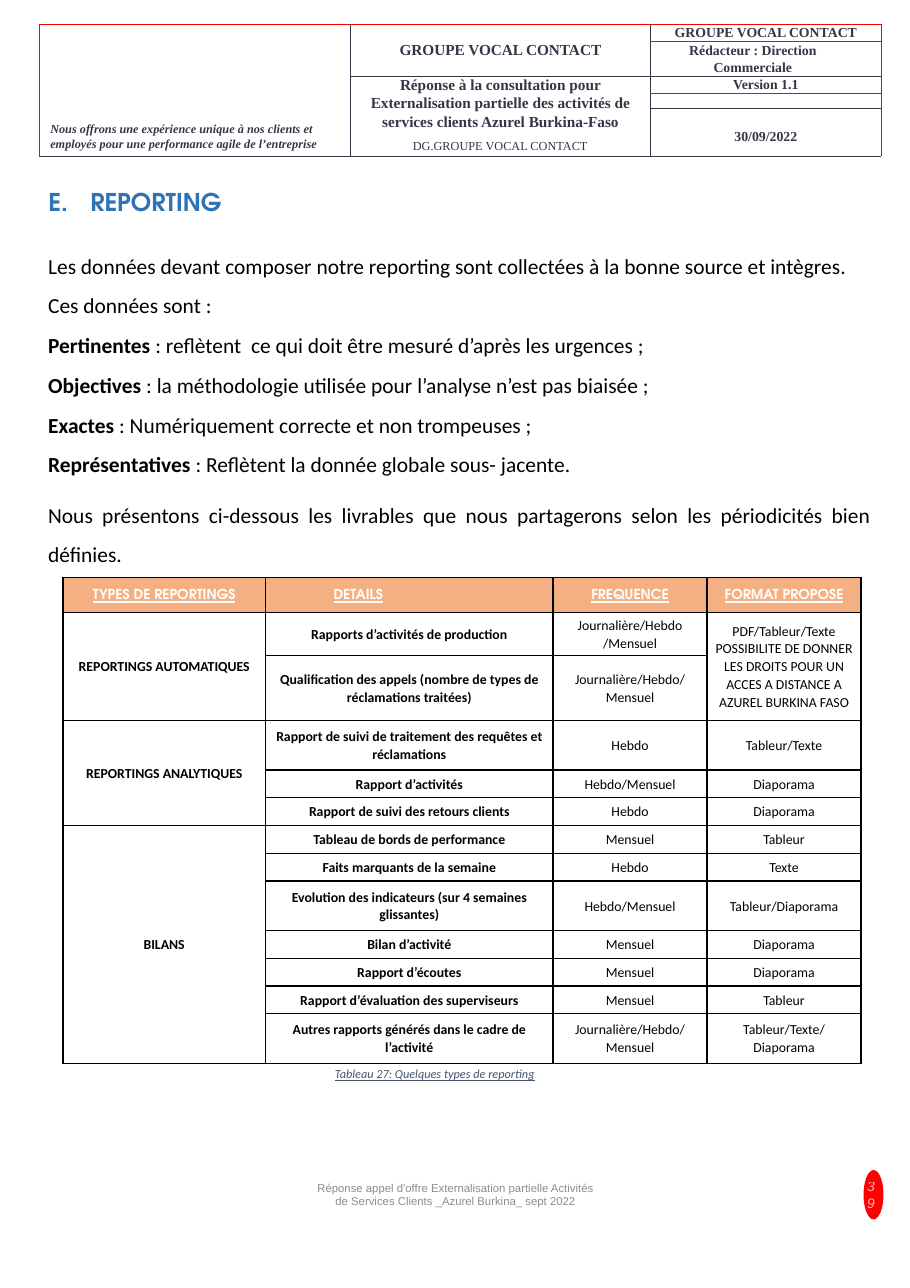
from lxml import etree
from pptx import Presentation
from pptx.dml.color import RGBColor
from pptx.enum.shapes import MSO_SHAPE
from pptx.enum.text import MSO_ANCHOR, PP_ALIGN
from pptx.oxml.ns import qn
from pptx.util import Cm, Pt

LEFT, CENTER, RIGHT, JUSTIFY = PP_ALIGN.LEFT, PP_ALIGN.CENTER, PP_ALIGN.RIGHT, PP_ALIGN.JUSTIFY
TOP, MIDDLE = MSO_ANCHOR.TOP, MSO_ANCHOR.MIDDLE
ELLIPSE = MSO_SHAPE.OVAL
RED, BLACK, WHITE, INK = "FF0000", "000000", "FFFFFF", "373545"

# Text styles
HEADER = dict(name="Times New Roman", size=Pt(9), bold=True, color=INK)
TITLE = dict(name="TeX Gyre Adventor", size=Pt(16), bold=True, color="2E74B5")
BODY = dict(name="Calibri", size=Pt(14), color=BLACK)
HEAD_ROW = dict(name="TeX Gyre Adventor", size=Pt(9), bold=True, underline=True, color=WHITE)
CELL = dict(name="Calibri", size=Pt(9), color=BLACK)
CELL_BOLD = {**CELL, "bold": True}
CAPTION = dict(name="Calibri", size=Pt(8), italic=True, underline=True, color="44546A")
FOOTER = dict(name="Arial", size=Pt(7.4), color="8C8C8C")
PAGE = dict(name="Arial", size=Pt(9), italic=True, color=WHITE)


def rgb(value):
    return RGBColor.from_string(value)


class Page:
    def __init__(self, prs):
        self.s = prs.slides.add_slide(prs.slide_layouts[5])

    def fill_text(self, tf, paras, fmt, **para_fmt):
        """Each paragraph is a string or a list of (text, format changes)."""
        for i, para in enumerate(paras):
            p = tf.paragraphs[0] if i == 0 else tf.add_paragraph()
            for key, value in para_fmt.items():
                setattr(p, key, value)
            for text, change in [(para, {})] if isinstance(para, str) else para:
                r = p.add_run()
                r.text = text
                for key, value in {**fmt, **change}.items():
                    if key == "color":
                        r.font.color.rgb = rgb(value)
                    else:
                        setattr(r.font, key, value)

    def indent(self, p, left, first):
        pPr = p._p.get_or_add_pPr()
        pPr.set("marL", str(Cm(left)))
        pPr.set("indent", str(Cm(first)))
        return pPr

    def title(self, box, text):
        sp = self.s.shapes.title
        sp.left, sp.top, sp.width, sp.height = map(Cm, box)
        tf = sp.text_frame
        tf.vertical_anchor = TOP
        self.fill_text(tf, [text], TITLE, alignment=LEFT, line_spacing=1.07)
        pPr = self.indent(tf.paragraphs[0], 0.97, -0.97)
        etree.SubElement(pPr, qn("a:buFont"), typeface="+mj-lt")
        etree.SubElement(pPr, qn("a:buAutoNum"), type="alphaUcPeriod", startAt="5")

    def text(self, box, paras, fmt, anchor=TOP, wrap=True, **para_fmt):
        tf = self.s.shapes.add_textbox(*map(Cm, box)).text_frame
        tf.word_wrap, tf.vertical_anchor = wrap, anchor
        self.fill_text(tf, paras, fmt, **para_fmt)
        return tf

    def ellipse(self, box, color):
        sp = self.s.shapes.add_shape(ELLIPSE, *map(Cm, box))
        sp.shadow.inherit = False
        sp.fill.solid()
        sp.fill.fore_color.rgb = rgb(color)
        sp.line.fill.background()

    def table(self, x, y, cols, rows, merges, side):
        frame = self.s.shapes.add_table(len(rows), len(cols), Cm(x), Cm(y),
                                        Cm(sum(cols)), Cm(sum(rows)))
        tbl = frame.table
        tbl.first_row = tbl.horz_banding = False
        for col, width in zip(tbl.columns, cols):
            col.width = Cm(width)
        for row, height in zip(tbl.rows, rows):
            row.height = Cm(height)
        for r, c, last in merges:
            tbl.cell(r, c).merge(tbl.cell(last, c))
        for cell in tbl.iter_cells():
            cell.margin_left = cell.margin_right = Cm(side)
            cell.margin_top = cell.margin_bottom = 0
            cell.fill.background()
            end = etree.SubElement(cell.text_frame.paragraphs[0]._p, qn("a:endParaRPr"))
            end.set("sz", "700")
        return tbl

    def border(self, cell, colors, width):
        tcPr = cell._tc.get_or_add_tcPr()
        for i, edge in enumerate("LRTB"):
            ln = etree.Element(qn("a:ln" + edge), w=str(Pt(width)))
            fill = etree.SubElement(ln, qn("a:solidFill"))
            etree.SubElement(fill, qn("a:srgbClr"), val=colors[edge])
            tcPr.insert(i, ln)


def header(page):
    tbl = page.table(0.91, 0.56, [7.16, 6.93, 5.31], [0.37, 0.81, 0.39, 0.35, 1.11],
                     [(0, 0, 4), (0, 1, 1), (2, 1, 4)], 0)
    # Red edges of each cell; the others are dark
    red_edges = [["LT", "T", "RTB"], ["L", "", "RT"], ["L", "", "RB"], ["L", "", "RT"],
                 ["L", "", "R"]]
    for r, row in enumerate(red_edges):
        for c, red in enumerate(row):
            page.border(tbl.cell(r, c), {e: RED if e in red else INK for e in "LRTB"}, 0.25)
    big = {"size": Pt(10)}
    texts = [
        (0, 1, [[("GROUPE VOCAL CONTACT", big)]], None),
        (0, 2, ["GROUPE VOCAL CONTACT"], 10.7),
        (1, 2, ["Rédacteur : Direction Commerciale"], 11.3),
        (2, 1, [[("Réponse à la consultation pour", big)],
                [("Externalisation partielle des activités de services clients "
                  "Azurel Burkina-Faso", big)],
                [("DG.GROUPE VOCAL CONTACT", {"size": Pt(8), "bold": False})]], 11.9),
        (2, 2, ["Version 1.1"], 10.8),
        (4, 2, ["30/09/2022"], None),
    ]
    for r, c, paras, spacing in texts:
        page.fill_text(tbl.cell(r, c).text_frame, paras, HEADER, alignment=CENTER,
                       line_spacing=Pt(spacing) if spacing else None)
    tbl.cell(0, 1).vertical_anchor = tbl.cell(4, 2).vertical_anchor = MIDDLE
    tbl.cell(4, 2).margin_top = Cm(0.22)
    tbl.cell(2, 1).text_frame.paragraphs[2].space_before = Pt(2.6)
    editor = tbl.cell(1, 2).text_frame.paragraphs[0]
    editor.alignment = LEFT
    page.indent(editor, 1.45, -0.56)
    page.text((0.91, 2.67, 7.24, 0.94),
              ["Nous offrons une expérience unique à nos clients et employés pour une "
               "performance agile de l’entreprise"], {**HEADER, "size": Pt(8), "italic": True})


def body(page):
    page.title((0.86, 4.14, 19.48, 1), "REPORTING")
    qualities = [("Pertinentes", " : reflètent  ce qui doit être mesuré d’après les urgences ;"),
                 ("Objectives", " : la méthodologie utilisée pour l’analyse n’est pas biaisée ;"),
                 ("Exactes", " : Numériquement correcte et non trompeuses ;"),
                 ("Représentatives", " : Reflètent la donnée globale sous- jacente.")]
    paras = ["Les données devant composer notre reporting sont collectées à la bonne source "
             "et intègres.", "Ces données sont :"]
    paras += [[(name, {"bold": True}), (rest, {})] for name, rest in qualities]
    paras.append("Nous présentons ci-dessous les livrables que nous partagerons selon les "
                 "périodicités bien définies.")
    tf = page.text((0.86, 5.66, 19.48, 7.6), paras, BODY, alignment=JUSTIFY,
                   line_spacing=1.07, space_after=Pt(8))
    tf.paragraphs[-1].line_spacing = 1.5


def reports(page):
    often = ["Journalière/Hebdo/", "Mensuel"]
    access = ("PDF/Tableur/Texte POSSIBILITE DE DONNER LES DROITS POUR UN ACCES A DISTANCE A "
              "AZUREL BURKINA FASO")
    # Group, details, frequency, format, row height
    rows = [
        ("TYPES DE REPORTINGS", "DETAILS", "FREQUENCE", "FORMAT PROPOSE", 0.81),
        ("REPORTINGS AUTOMATIQUES", "Rapports d’activités de production",
         ["Journalière/Hebdo", "/Mensuel"], access, 0.99),
        ("", "Qualification des appels (nombre de types de réclamations traitées)", often, "", 1.5),
        ("REPORTINGS ANALYTIQUES", "Rapport de suivi de traitement des requêtes et réclamations",
         "Hebdo", "Tableur/Texte", 1.14),
        ("", "Rapport d’activités", "Hebdo/Mensuel", "Diaporama", 0.64),
        ("", "Rapport de suivi des retours clients", "Hebdo", "Diaporama", 0.64),
        ("BILANS", "Tableau de bords de performance", "Mensuel", "Tableur", 0.64),
        ("", "Faits marquants de la semaine", "Hebdo", "Texte", 0.64),
        ("", "Evolution des indicateurs (sur 4 semaines glissantes)", "Hebdo/Mensuel",
         "Tableur/Diaporama", 1.14),
        ("", "Bilan d’activité", "Mensuel", "Diaporama", 0.64),
        ("", "Rapport d’écoutes", "Mensuel", "Diaporama", 0.64),
        ("", "Rapport d’évaluation des superviseurs", "Mensuel", "Tableur", 0.64),
        ("", "Autres rapports générés dans le cadre de l’activité", often,
         ["Tableur/Texte/", "Diaporama"], 1.14),
    ]
    tbl = page.table(1.45, 13.31, [4.67, 6.63, 3.55, 3.55], [row[-1] for row in rows],
                     [(1, 0, 2), (1, 3, 2), (3, 0, 5), (6, 0, 12)], 0.15)
    for r, row in enumerate(rows):
        for c, value in enumerate(row[:-1]):
            cell = tbl.cell(r, c)
            page.border(cell, dict.fromkeys("LRTB", BLACK), 1)
            cell.vertical_anchor = MIDDLE
            if r == 0:
                cell.fill.solid()
                cell.fill.fore_color.rgb = rgb("F4B083")
            if value:
                fmt = HEAD_ROW if r == 0 else CELL_BOLD if c < 2 else CELL
                page.fill_text(cell.text_frame, [value] if isinstance(value, str) else value,
                               fmt, alignment=CENTER, line_spacing=1.07)
    details = tbl.cell(0, 1)
    details.text_frame.paragraphs[0].alignment = LEFT
    details.margin_left = Cm(1.57)
    page.text((7.44, 24.46, 5.18, 0.61), ["Tableau 27: Quelques types de reporting"], CAPTION,
              wrap=False, alignment=CENTER)


def footer(page):
    page.text((6.96, 26.75, 7.09, 1.57),
              ["Réponse appel d'offre Externalisation partielle Activités de Services Clients "
               "_Azurel Burkina_ sept 2022"], FOOTER, anchor=MIDDLE, alignment=CENTER)
    page.ellipse((19.91, 26.97, 0.46, 1.14), RED)
    tf = page.text((19.74, 26.75, 0.61, 1.57), ["39"], PAGE, anchor=MIDDLE, alignment=RIGHT)
    color = tf.paragraphs[0].runs[0]._r.find(".//" + qn("a:srgbClr"))
    etree.SubElement(color, qn("a:alpha"), val="70000")


def main():
    prs = Presentation()
    prs.slide_width, prs.slide_height = Cm(20.98), Cm(29.69)
    page = Page(prs)
    for part in (header, body, reports, footer):
        part(page)
    prs.save("out.pptx")


if __name__ == "__main__":
    main()
